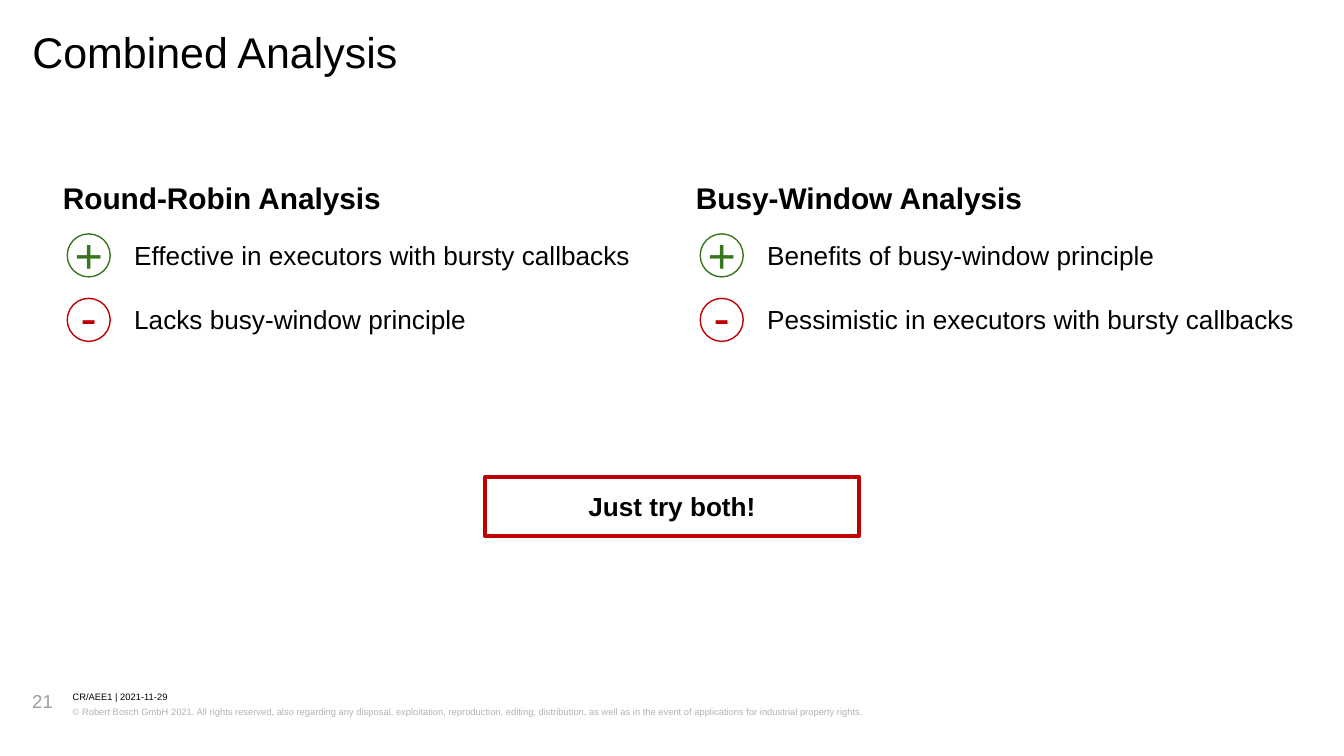
from dataclasses import dataclass

from pptx import Presentation
from pptx import util as u
from pptx.dml.color import RGBColor
from pptx.enum import shapes, text


@dataclass(frozen=True)
class Theme:
    font: str = "Arial"
    ink: str = "000000"
    plus: str = "38761D"
    minus: str = "C00000"
    number: str = "999FA6"
    legal: str = "B2B3B5"
    title_size: float = 23
    heading_size: float = 16
    body_size: float = 14
    symbol_size: float = 26
    number_size: float = 10
    footer_size: float = 5


THEME = Theme()
WIDTH = 10
HEIGHT = WIDTH * 9 / 16
MARGIN = 0.24
INSET = 0.1
COLUMN_LEFT, COLUMN_STEP, COLUMN_TOP = 0.37, 4.71, 1.24
ROW_TOP, ROW_STEP = 0.44, 0.48
BADGE = 0.32
# Symbol, colour and bottom inset of each row's badge
BADGES = (("+", THEME.plus, 0.02), ("-", THEME.minus, 0.05))


def inches(*lengths):
    return [u.Inches(length) for length in lengths]


def write(box, words, size, color=THEME.ink, bold=False, insets=(0, 0, 0, 0),
          align=text.PP_ALIGN.LEFT, anchor=text.MSO_ANCHOR.TOP, spacing=1.0, wrap=True):
    frame = box.text_frame
    frame.word_wrap = wrap
    frame.vertical_anchor = anchor
    (frame.margin_left, frame.margin_top,
     frame.margin_right, frame.margin_bottom) = inches(*insets)
    para = frame.paragraphs[0]
    para.text = words
    para.alignment = align
    para.line_spacing = spacing
    para.font.name = THEME.font
    para.font.size = u.Pt(size)
    para.font.bold = bold
    para.font.color.rgb = RGBColor.from_string(color)


def add_text(page, area, words, size, **style):
    write(page.shapes.add_textbox(*inches(*area)), words, size, **style)


def add_outline(page, kind, area, color, weight):
    shape = page.shapes.add_shape(kind, *inches(*area))
    shape.shadow.inherit = False
    shape.fill.background()
    shape.line.color.rgb = RGBColor.from_string(color)
    shape.line.width = u.Pt(weight)
    return shape


def add_title(page, area, words):
    title = page.shapes.title
    title.left, title.top, title.width, title.height = inches(*area)
    write(title, words, THEME.title_size, spacing=0.89)


def add_column(page, left, top, heading, points):
    """A heading above one row for the benefit and one for the drawback."""
    insets = (INSET,) * 4
    add_text(page, (left, top, 4.43, 0.71), heading, THEME.heading_size,
             bold=True, insets=insets)
    for row, (words, (symbol, color, lift)) in enumerate(zip(points, BADGES)):
        row_top = top + ROW_TOP + row * ROW_STEP
        badge = add_outline(page, shapes.MSO_SHAPE.OVAL,
                            (left + 0.13, row_top + 0.06, BADGE, BADGE), color, 0.75)
        write(badge, symbol, THEME.symbol_size, color, insets=(0, 0, 0, lift),
              align=text.PP_ALIGN.CENTER, anchor=text.MSO_ANCHOR.MIDDLE, wrap=False)
        add_text(page, (left + 0.53, row_top, 4.29, 0.44), words, THEME.body_size,
                 insets=insets)


def add_conclusion(page, area, words):
    box = add_outline(page, shapes.MSO_SHAPE.RECTANGLE, area, THEME.minus, 2.25)
    write(box, words, THEME.body_size, bold=True, insets=(INSET,) * 4,
          align=text.PP_ALIGN.CENTER)


def add_footer(page, left, top, number, label, legal):
    line_left = left + 0.3
    add_text(page, (left, top, 0.26, 0.37), number, THEME.number_size, color=THEME.number)
    add_text(page, (line_left, top + 0.01, 8.34, 0.1), label, THEME.footer_size,
             spacing=1.07)
    add_text(page, (line_left, top + 0.11, 8.34, 0.2), legal, THEME.footer_size,
             color=THEME.legal, spacing=1.2)


def main():
    deck = Presentation()
    deck.slide_width, deck.slide_height = inches(WIDTH, HEIGHT)
    page = deck.slides.add_slide(deck.slide_layouts[5])

    # Title
    add_title(page, (MARGIN, MARGIN, WIDTH - 2 * MARGIN, 0.35), "Combined Analysis")

    # Comparison of the two analyses
    columns = (
        ("Round-Robin Analysis",
         ("Effective in executors with bursty callbacks", "Lacks busy-window principle")),
        ("Busy-Window Analysis",
         ("Benefits of busy-window principle",
          "Pessimistic in executors with bursty callbacks")),
    )
    for index, (heading, points) in enumerate(columns):
        add_column(page, COLUMN_LEFT + index * COLUMN_STEP, COLUMN_TOP, heading, points)

    # Conclusion, centred on the slide
    box_width = 2.78
    add_conclusion(page, ((WIDTH - box_width) / 2, 3.55, box_width, 0.44), "Just try both!")

    # Footer
    add_footer(page, MARGIN, 5.13, "21", "CR/AEE1 | 2021-11-29",
               "© Robert Bosch GmbH 2021. All rights reserved, also regarding any disposal, "
               "exploitation, reproduction, editing, distribution, as well as in the event "
               "of applications for industrial property rights.")

    deck.save("out.pptx")


if __name__ == "__main__":
    main()
